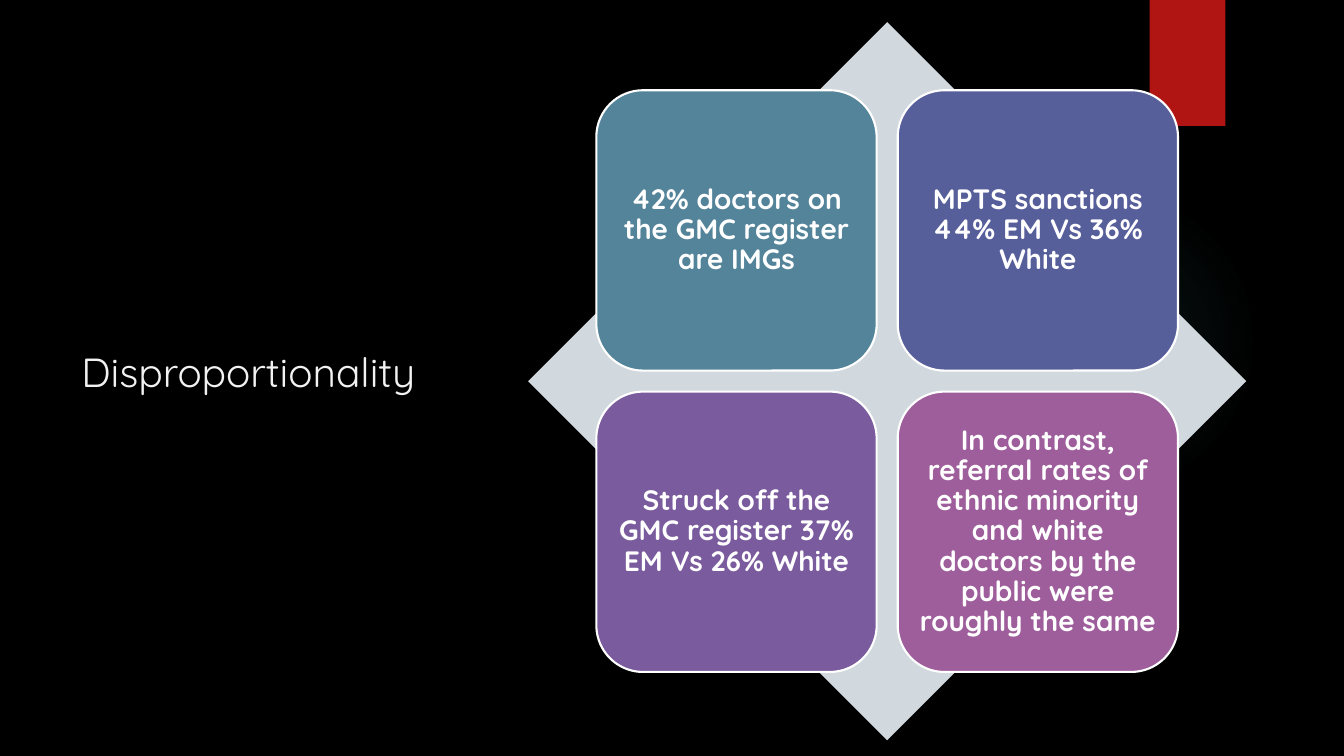
from dataclasses import dataclass

from lxml import etree
from pptx import Presentation
from pptx.dml.color import RGBColor
from pptx.enum.shapes import MSO_SHAPE
from pptx.enum.text import MSO_ANCHOR, MSO_AUTO_SIZE, PP_ALIGN
from pptx.oxml import parse_xml
from pptx.oxml.ns import nsdecls, qn
from pptx.util import Pt

DIAMOND, OVAL = MSO_SHAPE.DIAMOND, MSO_SHAPE.OVAL
RECTANGLE, ROUNDED = MSO_SHAPE.RECTANGLE, MSO_SHAPE.ROUNDED_RECTANGLE
MIDDLE, NO_FIT = MSO_ANCHOR.MIDDLE, MSO_AUTO_SIZE.NONE
LEFT, CENTER = PP_ALIGN.LEFT, PP_ALIGN.CENTER
EMU_PER_PX = 9525


@dataclass(frozen=True)
class Theme:
    """Colours, typeface and type sizes of the deck."""
    font: str = "Quicksand"
    title_size: int = 29
    card_size: int = 20
    background: str = "000000"
    title: str = "F2F2F2"
    white: str = "FFFFFF"
    glow: str = "50B9C1"
    ribbon: str = "B01513"
    diamond: str = "D1D9DE"


THEME = Theme()
CARDS = [
    ("42% doctors on the GMC register are IMGs", "54849A"),
    ("MPTS sanctions 44% EM Vs 36% White", "575F9B"),
    ("Struck off the GMC register 37% EM Vs 26% White", "7A5B9D"),
    ("In contrast, referral rates of ethnic minority and white doctors "
     "by the public were roughly the same", "9E5E9B"),
]


def px(length):
    """Turn pixels into EMU."""
    return length * EMU_PER_PX


def add_block(page, kind, box, color):
    """Add a flat filled shape without outline or shadow."""
    shape = page.shapes.add_shape(kind, *map(px, box))
    shape.shadow.inherit = False
    shape.fill.solid()
    shape.fill.fore_color.rgb = RGBColor.from_string(color)
    shape.line.fill.background()
    return shape


def style_text(frame, size, color, alignment, bold):
    """Format the only paragraph of a text frame."""
    frame.word_wrap = True
    frame.auto_size = NO_FIT
    frame.vertical_anchor = MIDDLE
    para = frame.paragraphs[0]
    para.alignment = alignment
    para.line_spacing = 0.9
    for span in para.runs:
        span.font.name = THEME.font
        span.font.size = Pt(size)
        span.font.bold = bold
        span.font.color.rgb = RGBColor.from_string(color)


def add_glow(page, box):
    """Add the faint circle that fades towards its rim."""
    glow = add_block(page, OVAL, box, THEME.glow)
    gradient = parse_xml(
        f'<a:gradFill {nsdecls("a")} rotWithShape="1"><a:gsLst/>'
        '<a:path path="circle">'
        '<a:fillToRect l="50000" t="50000" r="50000" b="50000"/>'
        '</a:path></a:gradFill>')
    for position, opacity in ((0, 7), (36, 6), (69, 0)):
        stop = etree.SubElement(gradient[0], qn("a:gs"), pos=str(position * 1000))
        color = etree.SubElement(stop, qn("a:srgbClr"), val=THEME.glow)
        etree.SubElement(color, qn("a:alpha"), val=str(opacity * 1000))
    properties = glow.element.spPr
    properties.replace(properties.find(qn("a:solidFill")), gradient)


def add_backdrop(page):
    """Paint the background, the glow and the ribbon."""
    page.background.fill.solid()
    page.background.fill.fore_color.rgb = RGBColor.from_string(THEME.background)
    add_glow(page, (903, 176, 296, 296))
    add_block(page, RECTANGLE, (1095, 0, 72, 120), THEME.ribbon)


def add_title(page, text, box):
    """Place the slide title in its box."""
    title = page.shapes.title
    title.left, title.top, title.width, title.height = map(px, box)
    title.text_frame.text = text
    style_text(title.text_frame, THEME.title_size, THEME.title, LEFT, False)


def add_card(page, text, color, box):
    """Add one rounded card with centred text."""
    card = add_block(page, ROUNDED, box, color)
    card.line.color.rgb = RGBColor.from_string(THEME.white)
    card.line.width = Pt(1.5)
    frame = card.text_frame
    frame.text = text
    frame.margin_left = frame.margin_right = px(8)
    frame.margin_top = frame.margin_bottom = px(8)
    style_text(frame, THEME.card_size, THEME.white, CENTER, True)


def add_matrix(page, cards, box):
    """Centre a two by two grid of cards on a diamond."""
    left, top, width, height = box
    size, gap = 267, 20
    inset_x = (width - 2 * size - gap) // 2
    inset_y = (height - 2 * size - gap) // 2
    add_block(page, DIAMOND, box, THEME.diamond)
    for index, (text, color) in enumerate(cards):
        row, column = divmod(index, 2)
        card_left = left + inset_x + column * (size + gap)
        card_top = top + inset_y + row * (size + gap)
        add_card(page, text, color, (card_left, card_top, size, size))


def main():
    """Build the deck and save it."""
    deck = Presentation()
    deck.slide_width, deck.slide_height = px(1280), px(720)
    page = deck.slides.add_slide(deck.slide_layouts.get_by_name("Title Only"))
    add_backdrop(page)
    add_title(page, "Disproportionality", (68, 111, 368, 491))
    add_matrix(page, CARDS, (503, 21, 684, 684))
    deck.save("out.pptx")


if __name__ == "__main__":
    main()
